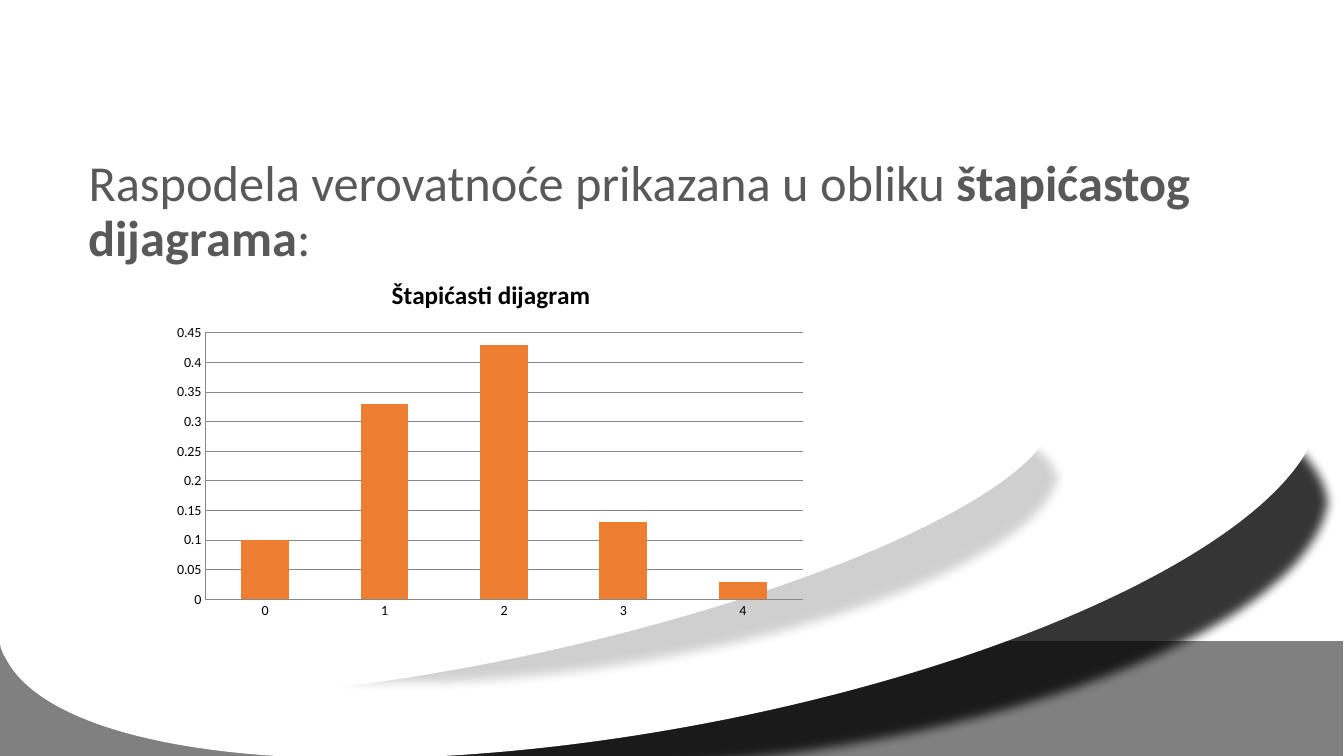
from lxml import etree
from pptx import Presentation
from pptx.chart.data import CategoryChartData
from pptx.dml.color import RGBColor
from pptx.enum.chart import XL_CHART_TYPE, XL_TICK_MARK
from pptx.enum.shapes import MSO_SHAPE
from pptx.oxml import parse_xml
from pptx.oxml.ns import nsdecls, qn
from pptx.util import Inches, Pt

COLUMNS = XL_CHART_TYPE.COLUMN_CLUSTERED
NO_TICKS = XL_TICK_MARK.NONE
RECTANGLE = MSO_SHAPE.RECTANGLE
OVAL = MSO_SHAPE.OVAL
FONT = "Calibri"
COLORS = {
    "white": "FFFFFF",
    "band": "808080",
    "shade": "000000",
    "text": "595959",
    "chart_text": "000000",
    "grid": "878787",
    "bar": "ED7D31",
}


def color(name):
    return RGBColor.from_string(COLORS[name])


def add_filled_shape(slide, kind, left, top, width, height, fill):
    shape = slide.shapes.add_shape(
        kind, Inches(left), Inches(top), Inches(width), Inches(height))
    shape.shadow.inherit = False
    shape.fill.solid()
    shape.fill.fore_color.rgb = color(fill)
    shape.line.fill.background()
    return shape


def add_ellipse(slide, center_x, center_y, width, height, tilt, fill):
    ellipse = add_filled_shape(
        slide, OVAL, center_x - width / 2, center_y - height / 2, width, height, fill)
    ellipse.rotation = -tilt
    return ellipse


def add_soft_shade(slide, center_x, center_y, width, height, tilt, opacity):
    shade = add_ellipse(slide, center_x, center_y, width, height, tilt, "shade")
    properties = shade._element.spPr
    fill_color = properties.find(qn("a:solidFill")).find(qn("a:srgbClr"))
    etree.SubElement(fill_color, qn("a:alpha")).set("val", str(opacity * 1000))
    effects = properties.find(qn("a:effectLst"))
    etree.SubElement(effects, qn("a:softEdge")).set("rad", str(Pt(8)))


def add_heading(slide):
    box = slide.shapes.add_textbox(Inches(0.78), Inches(1.52), Inches(11.37), Inches(1.2))
    box.text_frame.word_wrap = True
    paragraph = box.text_frame.paragraphs[0]
    paragraph.line_spacing = 0.9
    for text, bold in (
        ("Raspodela verovatnoće prikazana u obliku ", False),
        ("štapićastog dijagrama", True),
        (":", False),
    ):
        run = paragraph.add_run()
        run.text = text
        run.font.name = FONT
        run.font.size = Pt(36)
        run.font.bold = bold
        run.font.color.rgb = color("text")


def set_font(font, size, bold=False):
    font.name = FONT
    font.size = Pt(size)
    font.bold = bold
    font.color.rgb = color("chart_text")


def style_line(line):
    line.color.rgb = color("grid")
    line.width = Pt(0.75)


def set_plot_layout(chart, x, y, width, height):
    plot_area = chart._chartSpace.chart.plotArea
    for layout in plot_area.findall(qn("c:layout")):
        plot_area.remove(layout)
    plot_area.insert(0, parse_xml(
        f'<c:layout {nsdecls("c")}><c:manualLayout><c:layoutTarget val="inner"/>'
        f'<c:xMode val="edge"/><c:yMode val="edge"/><c:x val="{x}"/><c:y val="{y}"/>'
        f'<c:w val="{width}"/><c:h val="{height}"/></c:manualLayout></c:layout>'))


def add_probability_chart(slide):
    title = "Štapićasti dijagram"
    data = CategoryChartData()
    data.categories = ["0", "1", "2", "3", "4"]
    data.add_series(title, (0.1, 0.33, 0.43, 0.13, 0.03))
    chart = slide.shapes.add_chart(
        COLUMNS, Inches(1.65), Inches(2.58), Inches(6.44), Inches(3.62), data).chart
    set_font(chart.font, 10)
    chart.has_legend = False
    chart.has_title = True
    chart.chart_title.text_frame.text = title
    set_font(chart.chart_title.text_frame.paragraphs[0].runs[0].font, 18, True)
    set_plot_layout(chart, 0.06, 0.2, 0.92, 0.73)

    plot = chart.plots[0]
    plot.gap_width = 150
    plot.vary_by_categories = False
    bars = plot.series[0].format.fill
    bars.solid()
    bars.fore_color.rgb = color("bar")

    for axis in (chart.category_axis, chart.value_axis):
        axis.major_tick_mark = NO_TICKS
        axis.minor_tick_mark = NO_TICKS
        style_line(axis.format.line)
    value_axis = chart.value_axis
    value_axis.minimum_scale = 0
    value_axis.maximum_scale = 0.45
    value_axis.major_unit = 0.05
    value_axis.has_major_gridlines = True
    style_line(value_axis.major_gridlines.format.line)
    value_axis.tick_labels.number_format = "General"
    value_axis.tick_labels.number_format_is_linked = False


def main():
    presentation = Presentation()
    presentation.slide_width = Inches(13.33)
    presentation.slide_height = Inches(7.5)
    slide = presentation.slides.add_slide(presentation.slide_layouts[6])
    add_filled_shape(slide, RECTANGLE, -0.01, 6.36, 13.33, 1.21, "band")
    add_soft_shade(slide, 7.5, 5.6, 11.6, 4, 7, 79)
    add_ellipse(slide, 6.54, 5.12, 13.32, 4.21, 10.6, "white")
    add_soft_shade(slide, 6, 5.38, 9.3, 2.66, 8.6, 19)
    add_ellipse(slide, 5.22, 5.24, 10.69, 2.47, 12.7, "white")
    add_heading(slide)
    add_probability_chart(slide)
    presentation.save("out.pptx")


if __name__ == "__main__":
    main()
